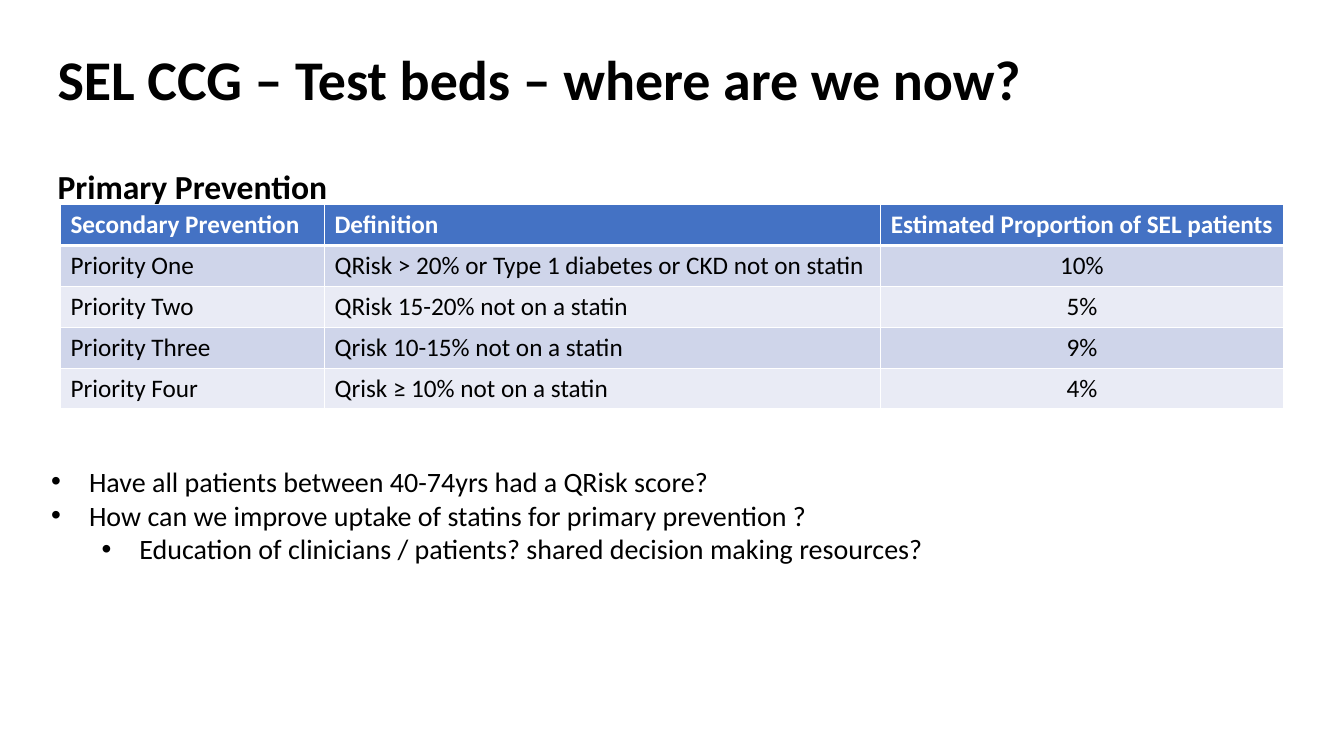
from dataclasses import dataclass

from pptx import Presentation
from pptx.dml.color import RGBColor as RGB
from pptx.enum.text import MSO_ANCHOR as Anchor, PP_ALIGN as Align
from pptx.oxml import parse_xml
from pptx.oxml.ns import nsdecls
from pptx.util import Pt


@dataclass(frozen=True)
class Theme:
    font: str = "Calibri"
    ink: str = "000000"
    paper: str = "FFFFFF"
    header: str = "4472C4"
    bands: tuple = ("CFD5EA", "E9EBF5")
    title_size: float = 40
    heading_size: float = 24
    bullet_size: float = 20
    table_size: float = 18


class SlideBuilder:
    def __init__(self, slide, theme):
        self.slide = slide
        self.theme = theme

    def add_words(self, paragraph, words, size, color, bold=False):
        run = paragraph.add_run()
        run.text = words
        run.font.name = self.theme.font
        run.font.size = Pt(size)
        run.font.bold = bold
        run.font.color.rgb = RGB.from_string(color)

    def frame(self, left, top, width, height):
        box = self.slide.shapes.add_textbox(Pt(left), Pt(top), Pt(width), Pt(height))
        box.text_frame.word_wrap = True
        return box.text_frame

    def heading(self, words, size, left, top, width, height, spacing=1.0):
        frame = self.frame(left, top, width, height)
        frame.vertical_anchor = Anchor.MIDDLE
        frame.paragraphs[0].line_spacing = spacing
        self.add_words(frame.paragraphs[0], words, size, self.theme.ink, bold=True)

    def bullets(self, items, left, top, width, height):
        frame = self.frame(left, top, width, height)
        for index, (level, words) in enumerate(items):
            item = frame.paragraphs[0] if index == 0 else frame.add_paragraph()
            item.level = level
            props = item._p.get_or_add_pPr()
            props.set("marL", str(Pt(27 + 36 * level)))
            props.set("indent", str(Pt(-27)))
            props.append(parse_xml(f'<a:buFont {nsdecls("a")} typeface="Arial"/>'))
            props.append(parse_xml(f'<a:buChar {nsdecls("a")} char="•"/>'))
            self.add_words(item, words, self.theme.bullet_size, self.theme.ink)

    def borders(self, cell, bottom, top):
        props = cell._tc.get_or_add_tcPr()
        for place, (side, weight) in enumerate(
                (("L", 1), ("R", 1), ("T", top), ("B", bottom))):
            props.insert(place, parse_xml(
                f'<a:ln{side} {nsdecls("a")} w="{Pt(weight)}"><a:solidFill>'
                f'<a:srgbClr val="{self.theme.paper}"/></a:solidFill></a:ln{side}>'))

    def table(self, rows, widths, row_height, left, top):
        theme = self.theme
        grid = self.slide.shapes.add_table(
            len(rows), len(widths), Pt(left), Pt(top),
            Pt(sum(widths)), Pt(row_height * len(rows))).table
        for column, width in zip(grid.columns, widths):
            column.width = Pt(width)
        for r, row in enumerate(rows):
            is_header = r == 0
            grid.rows[r].height = Pt(row_height)
            fill = theme.header if is_header else theme.bands[(r - 1) % 2]
            for c, words in enumerate(row):
                cell = grid.cell(r, c)
                cell.fill.solid()
                cell.fill.fore_color.rgb = RGB.from_string(fill)
                self.borders(cell, bottom=3 if is_header else 1, top=3 if r == 1 else 1)
                entry = cell.text_frame.paragraphs[0]
                if c == len(row) - 1 and not is_header:
                    entry.alignment = Align.CENTER
                self.add_words(entry, words, theme.table_size,
                               theme.paper if is_header else theme.ink, is_header)


PRIORITIES = [
    ("Secondary Prevention", "Definition", "Estimated Proportion of SEL patients"),
    ("Priority One", "QRisk > 20% or Type 1 diabetes or CKD not on statin", "10%"),
    ("Priority Two", "QRisk 15-20% not on a statin", "5%"),
    ("Priority Three", "Qrisk 10-15% not on a statin", "9%"),
    ("Priority Four", "Qrisk ≥ 10% not on a statin", "4%"),
]

QUESTIONS = [
    (0, "Have all patients between 40-74yrs had a QRisk score?"),
    (0, "How can we improve uptake of statins for primary prevention ?"),
    (1, "Education of clinicians / patients? shared decision making resources?"),
]


def main():
    deck = Presentation()
    deck.slide_width, deck.slide_height = Pt(960), Pt(540)
    theme = Theme()
    builder = SlideBuilder(deck.slides.add_slide(deck.slide_layouts[6]), theme)

    # Title and section heading
    builder.heading("SEL CCG – Test beds – where are we now?", theme.title_size,
                    34, 29, 860, 60, spacing=0.9)
    builder.heading("Primary Prevention", theme.heading_size, 34, 115, 259, 36.5)

    # Priority table
    builder.table(PRIORITIES, (188.6, 397.4, 287.4), 29.2, 43.2, 146.2)

    # Open questions
    builder.bullets(QUESTIONS, 29.5, 328.2, 917, 80)

    deck.save("out.pptx")


if __name__ == "__main__":
    main()
